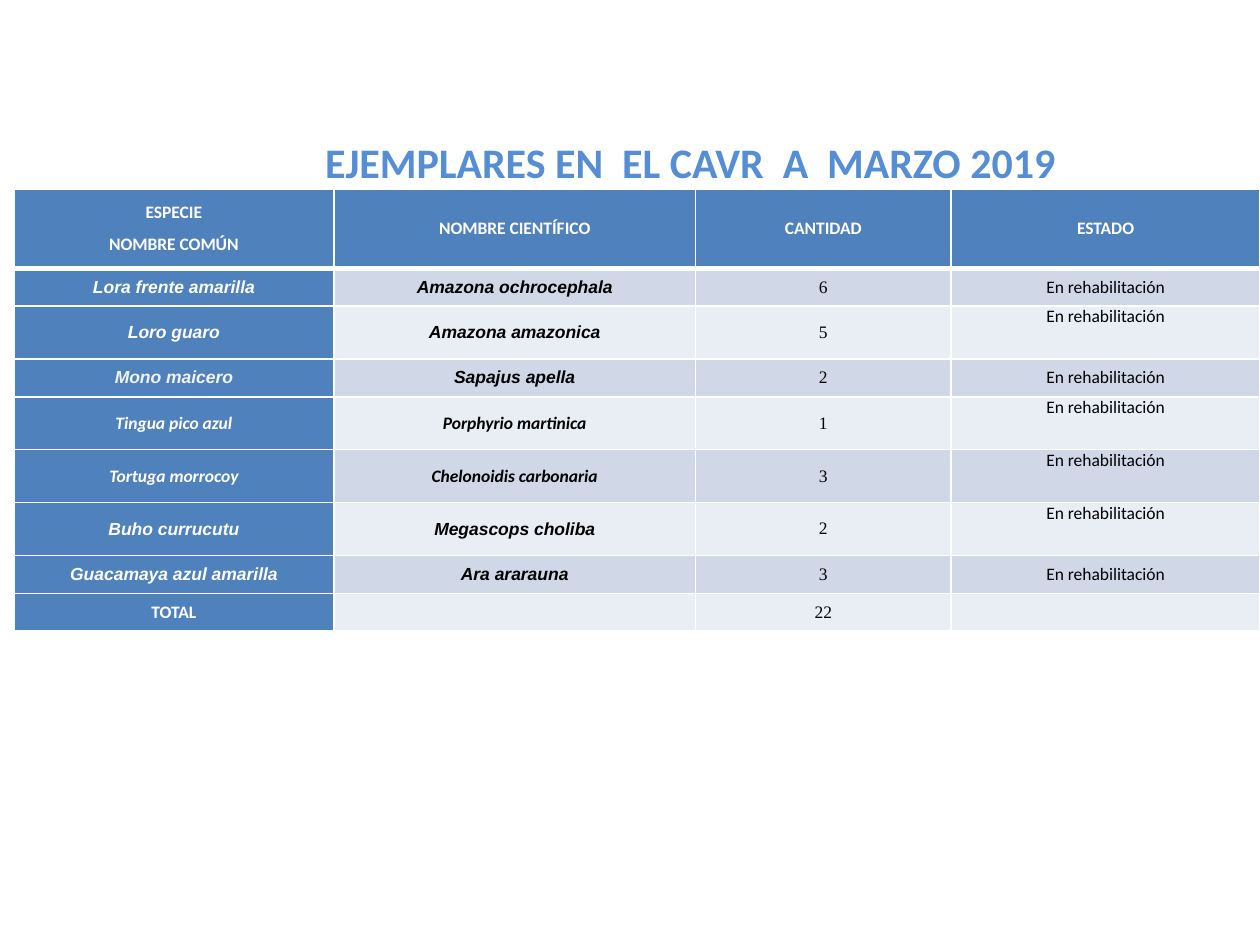
from dataclasses import dataclass

from lxml import etree
from pptx import Presentation
from pptx.dml.color import RGBColor
from pptx.enum.text import MSO_ANCHOR, MSO_AUTO_SIZE, PP_ALIGN
from pptx.oxml.ns import qn
from pptx.util import Inches, Pt

TOP, MIDDLE = MSO_ANCHOR.TOP, MSO_ANCHOR.MIDDLE
LEFT, CENTER = PP_ALIGN.LEFT, PP_ALIGN.CENTER
NO_FIT = MSO_AUTO_SIZE.NONE
SANS, ARIAL, SERIF = "Calibri", "Arial", "Times New Roman"
WHITE, BLACK, BLUE, TITLE_BLUE = "FFFFFF", "000000", "4F81BD", "558ED5"
BANDS = ("D0D8E8", "E9EDF4")
COLS = (2.54, 2.87, 2.03, 2.45)
HEADER_H, ROW_H, TALL_H = 0.63, 0.3, 0.42
HEADERS = ("ESPECIE\nNOMBRE COMÚN", "NOMBRE CIENTÍFICO", "CANTIDAD", "ESTADO")
STATE = "En rehabilitación"


@dataclass
class Species:
    common: str
    scientific: str
    count: int
    font: str = ARIAL
    color: str = WHITE
    tall: bool = False


@dataclass
class Style:
    font: str = SANS
    color: str = BLACK
    bold: bool = False
    italic: bool = False
    size: float = 10


SPECIES = (
    Species("Lora frente amarilla", "Amazona ochrocephala", 6),
    Species("Loro guaro", "Amazona amazonica", 5, tall=True),
    Species("Mono maicero", "Sapajus apella", 2, color="F2F2F2"),
    Species("Tingua pico azul", "Porphyrio martinica", 1, SANS, tall=True),
    Species("Tortuga morrocoy", "Chelonoidis carbonaria", 3, SANS, tall=True),
    Species("Buho currucutu", "Megascops choliba", 2, tall=True),
    Species("Guacamaya azul amarilla", "Ara ararauna", 3),
)
HEADING = Style(color=WHITE, bold=True)
NUMBER = Style(SERIF)
PLAIN = Style()


def rgb(color: str) -> RGBColor:
    return RGBColor.from_string(color)


def write(tf, text: str, style: Style, align, after: float = 0) -> None:
    tf.text = text
    for p in tf.paragraphs:
        p.alignment = align
        p.space_after = Pt(after)
        p.font.name = style.font
        p.font.size = Pt(style.size)
        p.font.bold = style.bold
        p.font.italic = style.italic
        p.font.color.rgb = rgb(style.color)


def set_borders(cell, bottom: float, top: float) -> None:
    pr = cell._tc.get_or_add_tcPr()
    widths = {"a:lnL": 1, "a:lnR": 1, "a:lnT": top, "a:lnB": bottom}
    for tag, width in widths.items():
        ln = etree.SubElement(pr, qn(tag), w=str(Pt(width)))
        fill = etree.SubElement(ln, qn("a:solidFill"))
        etree.SubElement(fill, qn("a:srgbClr"), val=WHITE)


def draw_cell(cell, text: str, style: Style, fill: str, anchor=MIDDLE,
              top: float = 1, bottom: float = 1) -> None:
    cell.margin_left = cell.margin_right = Inches(0.07)
    cell.margin_top = cell.margin_bottom = 0
    cell.vertical_anchor = anchor
    write(cell.text_frame, text, style, CENTER, after=6)
    set_borders(cell, bottom, top)
    cell.fill.solid()
    cell.fill.fore_color.rgb = rgb(fill)


def draw_title(s) -> None:
    title = s.shapes.title
    title.left, title.top = Inches(2.48), Inches(1.03)
    title.width, title.height = Inches(6.93), Inches(0.5)
    tf = title.text_frame
    tf.auto_size = NO_FIT
    tf.word_wrap = True
    tf.vertical_anchor = TOP
    write(tf, "EJEMPLARES EN  EL CAVR  A  MARZO 2019",
          Style(color=TITLE_BLUE, bold=True, size=24), LEFT)


def draw_table(s) -> None:
    heights = [HEADER_H, *(TALL_H if sp.tall else ROW_H for sp in SPECIES), ROW_H]
    table = s.shapes.add_table(
        len(heights), len(COLS), Inches(0.11), Inches(1.5),
        Inches(sum(COLS)), Inches(sum(heights))).table
    table.first_row = table.horz_banding = False
    for col, width in zip(table.columns, COLS):
        col.width = Inches(width)
    for row, height in zip(table.rows, heights):
        row.height = Inches(height)

    for c, text in enumerate(HEADERS):
        draw_cell(table.cell(0, c), text, HEADING, BLUE, bottom=3)

    rows = [
        ((sp.common, Style(sp.font, sp.color, True, True)),
         (sp.scientific, Style(sp.font, BLACK, True, True)),
         (str(sp.count), NUMBER), (STATE, PLAIN))
        for sp in SPECIES
    ]
    total = sum(sp.count for sp in SPECIES)
    rows.append((("TOTAL", HEADING), ("", PLAIN), (str(total), NUMBER), ("", PLAIN)))
    for r, row in enumerate(rows):
        tall = r < len(SPECIES) and SPECIES[r].tall
        for c, (text, style) in enumerate(row):
            draw_cell(table.cell(r + 1, c), text, style,
                      BANDS[r % 2] if c else BLUE,
                      TOP if tall and text == STATE else MIDDLE,
                      top=1 if r else 3)


def main() -> None:
    prs = Presentation()
    prs.slide_width, prs.slide_height = Inches(10), Inches(7.5)
    s = prs.slides.add_slide(prs.slide_layouts[5])
    draw_title(s)
    draw_table(s)
    prs.save("out.pptx")


if __name__ == "__main__":
    main()
